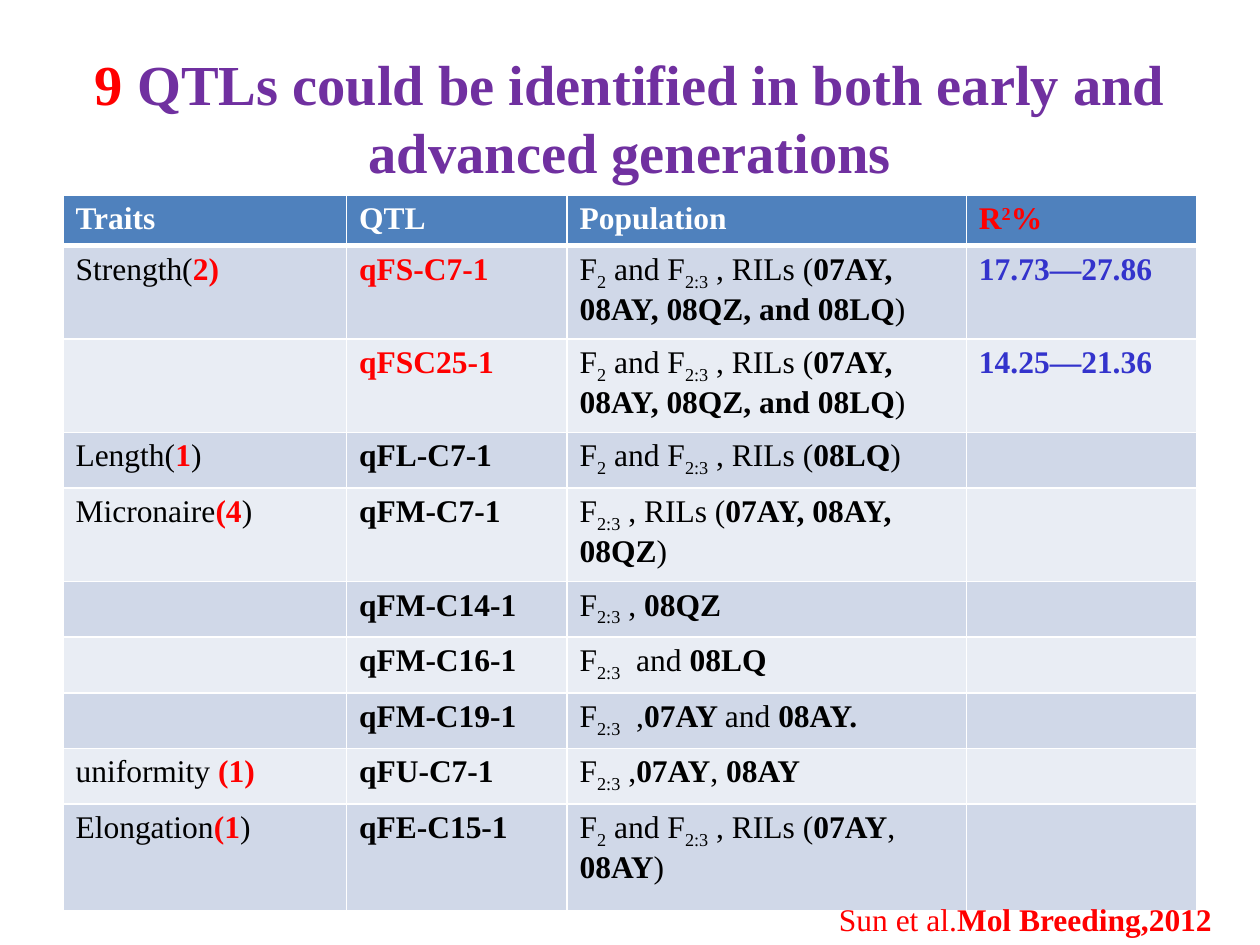
from collections import namedtuple

from lxml import etree
from pptx import Presentation
from pptx.dml.color import RGBColor
from pptx.enum.text import MSO_ANCHOR, PP_ALIGN
from pptx.oxml.ns import qn
from pptx.util import Inches, Pt

CENTER, MIDDLE = PP_ALIGN.CENTER, MSO_ANCHOR.MIDDLE
FONT = "Times New Roman"
BLACK, WHITE, RED = "000000", "FFFFFF", "FF0000"
PURPLE, BLUE = "7030A0", "3333CC"
HEADER_FILL, BAND_FILLS = "4F81BD", ("D0D8E8", "E9EDF4")

Run = namedtuple("Run", "text bold color baseline", defaults=(False, BLACK, 0))


def bold(text, color=BLACK, baseline=0):
    return Run(text, True, color, baseline)


def sub(text):
    return Run(text, baseline=-25)


# Generations and recurring table entries
F2_AND_F23 = [Run("F"), sub("2"), Run(" and F"), sub("2:3")]
F23 = [Run("F"), sub("2:3")]
RILS, CLOSE = Run(" , RILs ("), Run(")")
ALL_RILS = F2_AND_F23 + [RILS, bold("07AY, 08AY, 08QZ, and 08LQ"), CLOSE]

HEADER = [
    [bold("Traits", WHITE)],
    [bold("QTL", WHITE)],
    [bold("Population", WHITE)],
    [bold("R", RED), bold("2", RED, 30), bold("%", RED)],
]

# Trait, QTL, population, R2
QTL_ROWS = [
    [[Run("Strength("), bold("2)", RED)], [bold("qFS-C7-1", RED)],
     ALL_RILS, [bold("17.73—27.86", BLUE)]],
    [[], [bold("qFSC25-1", RED)], ALL_RILS, [bold("14.25—21.36", BLUE)]],
    [[Run("Length("), bold("1", RED), CLOSE], [bold("qFL-C7-1")],
     F2_AND_F23 + [RILS, bold("08LQ"), CLOSE], []],
    [[Run("Micronaire"), bold("(4", RED), CLOSE], [bold("qFM-C7-1")],
     F23 + [RILS, bold("07AY, 08AY, 08QZ"), CLOSE], []],
    [[], [bold("qFM-C14-1")], F23 + [Run(" , "), bold("08QZ")], []],
    [[], [bold("qFM-C16-1")], F23 + [Run("  and "), bold("08LQ")], []],
    [[], [bold("qFM-C19-1")],
     F23 + [Run("  ,"), bold("07AY "), Run("and "), bold("08AY.")], []],
    [[Run("uniformity "), bold("(1)", RED)], [bold("qFU-C7-1")],
     F23 + [Run(" ,"), bold("07AY"), Run(", "), bold("08AY")], []],
    [[Run("Elongation"), bold("(1", RED), CLOSE], [bold("qFE-C15-1")],
     F2_AND_F23 + [RILS, bold("07AY"), Run(", "), bold("08AY"), CLOSE], []],
]

COLUMN_WIDTHS = [2.25, 1.75, 3.17, 1.83]
ONE_LINE, TWO_LINES = 0.42, 0.69
ROW_HEIGHTS = [0.38, TWO_LINES, TWO_LINES, ONE_LINE, TWO_LINES,
               ONE_LINE, ONE_LINE, ONE_LINE, ONE_LINE, 0.85]


def rgb(color):
    return RGBColor.from_string(color)


def write_runs(paragraph, runs, size):
    paragraph.font.name = FONT
    paragraph.font.size = Pt(size)
    for part in runs:
        run = paragraph.add_run()
        run.text = part.text
        run.font.name = FONT
        run.font.size = Pt(size)
        run.font.bold = part.bold
        run.font.color.rgb = rgb(part.color)
        if part.baseline:
            run.font._element.set("baseline", str(part.baseline * 1000))


def set_borders(cell, widths):
    properties = cell._tc.get_or_add_tcPr()
    for side, width in zip(("L", "R", "T", "B"), widths):
        line = etree.SubElement(properties, qn(f"a:ln{side}"), w=str(Pt(width)))
        fill = etree.SubElement(line, qn("a:solidFill"))
        etree.SubElement(fill, qn("a:srgbClr"), val=WHITE)


def add_text(slide, left, top, width, height, runs, size, wrap=True):
    box = slide.shapes.add_textbox(
        Inches(left), Inches(top), Inches(width), Inches(height))
    box.text_frame.word_wrap = wrap
    write_runs(box.text_frame.paragraphs[0], runs, size)
    return box.text_frame


def add_qtl_table(slide, left, top):
    rows = [HEADER] + QTL_ROWS
    table = slide.shapes.add_table(
        len(rows), len(COLUMN_WIDTHS), Inches(left), Inches(top),
        Inches(sum(COLUMN_WIDTHS)), Inches(sum(ROW_HEIGHTS))).table
    for column, width in zip(table.columns, COLUMN_WIDTHS):
        column.width = Inches(width)
    for r, (entries, height) in enumerate(zip(rows, ROW_HEIGHTS)):
        table.rows[r].height = Inches(height)
        fill = BAND_FILLS[(r - 1) % 2] if r else HEADER_FILL
        # A thick rule separates the header from the body
        borders = (1, 1, 3 if r == 1 else 1, 3 if r == 0 else 1)
        for c, runs in enumerate(entries):
            cell = table.cell(r, c)
            set_borders(cell, borders)
            cell.fill.solid()
            cell.fill.fore_color.rgb = rgb(fill)
            write_runs(cell.text_frame.paragraphs[0], runs, 18)


def main():
    prs = Presentation()
    prs.slide_width, prs.slide_height = Inches(10), Inches(7.5)
    slide = prs.slides.add_slide(prs.slide_layouts[6])

    # Title
    title = add_text(slide, 0.5, 0.3, 9, 1.25, [
        bold("9 ", RED),
        bold("QTLs could be identified in both early and advanced generations",
             PURPLE)], 32.3)
    title.vertical_anchor = MIDDLE
    title.paragraphs[0].alignment = CENTER

    # QTLs by trait
    add_qtl_table(slide, 0.5, 1.55)

    # Citation
    add_text(slide, 6.56, 7.09, 3.25, 0.4, [
        Run("Sun et al.", color=RED), bold("Mol Breeding,2012", RED)],
        18, wrap=False)

    prs.save("out.pptx")


if __name__ == "__main__":
    main()
